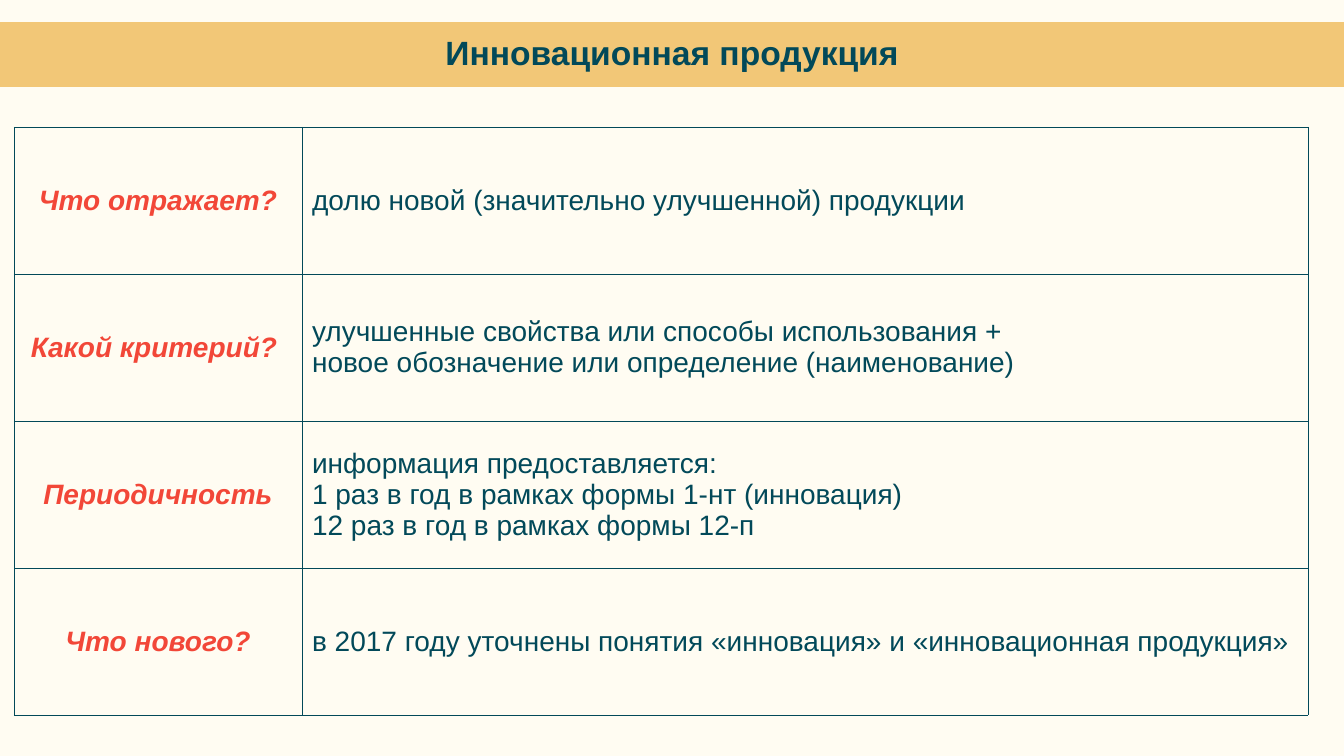
"""Build a slide with a title band and a table of questions and answers."""
from dataclasses import dataclass

from pptx import Presentation
from pptx.dml.color import RGBColor
from pptx.enum.shapes import MSO_SHAPE
from pptx.enum.text import MSO_ANCHOR, PP_ALIGN
from pptx.oxml import parse_xml
from pptx.oxml.ns import nsdecls
from pptx.util import Pt

SCALE = 12192000 / 1344


@dataclass(frozen=True)
class Theme:
    """Colours, font and type sizes of the slide."""
    paper: str = "FFFCF2"
    band: str = "F2C777"
    ink: str = "024959"
    accent: str = "F24738"
    font: str = "Arial"
    title: int = 24
    body: int = 20
    edge: float = 2.25
    rule: float = 0.25


THEME = Theme()
TITLE = {"size": Pt(THEME.title), "name": THEME.font, "bold": True}
LABEL = {"size": Pt(THEME.body), "name": THEME.font, "bold": True, "italic": True}
BODY = {"size": Pt(THEME.body), "name": THEME.font, "bold": False, "italic": False}

ROWS = [
    ("Что отражает?", ["долю новой (значительно улучшенной) продукции"], PP_ALIGN.JUSTIFY),
    ("Какой критерий? ", ["улучшенные свойства или способы использования + ",
                          "новое обозначение или определение (наименование)"], PP_ALIGN.JUSTIFY),
    ("Периодичность", ["информация предоставляется:",
                       "1 раз в год в рамках формы 1-нт (инновация)",
                       "12 раз в год в рамках формы 12-п"], PP_ALIGN.JUSTIFY),
    ("Что нового?", ["в 2017 году уточнены понятия «инновация» и «инновационная продукция»"],
     PP_ALIGN.LEFT),
]


def px(count):
    """Turn whole pixels into EMU."""
    return round(count * SCALE)


def paint(fill, color):
    """Give a fill one solid colour."""
    fill.solid()
    fill.fore_color.rgb = RGBColor.from_string(color)


def write(frame, lines, style, color, align):
    """Write one paragraph per line in one format."""
    for index, line in enumerate(lines):
        para = frame.add_paragraph() if index else frame.paragraphs[0]
        para.alignment = align
        run = para.add_run()
        run.text = line
        for key, value in style.items():
            setattr(run.font, key, value)
        run.font.color.rgb = RGBColor.from_string(color)


def add_band(slide, text, box):
    """Add the title band."""
    band = slide.shapes.add_shape(MSO_SHAPE.RECTANGLE, *map(px, box))
    band.shadow.inherit = False
    paint(band.fill, THEME.band)
    paint(band.line.fill, THEME.band)
    band.line.width = Pt(THEME.edge)
    frame = band.text_frame
    frame.word_wrap = True
    frame.vertical_anchor = MSO_ANCHOR.MIDDLE
    write(frame, [text], TITLE, THEME.ink, PP_ALIGN.CENTER)
    frame.paragraphs[0].line_spacing = Pt(THEME.title)


def frame_cell(cell):
    """Clear the fill of a cell and rule its four sides."""
    cell.fill.background()
    props = cell._tc.get_or_add_tcPr()
    for index, side in enumerate("LRTB"):
        props.insert(index, parse_xml(
            f'<a:ln{side} {nsdecls("a")} w="{Pt(THEME.rule)}"><a:solidFill>'
            f'<a:srgbClr val="{THEME.ink}"/></a:solidFill></a:ln{side}>'))


def add_grid(slide, rows, left, top, widths, height):
    """Add the table with labels on the left and answers on the right."""
    box = left, top, sum(widths), height * len(rows)
    table = slide.shapes.add_table(len(rows), len(widths), *map(px, box)).table
    table.first_row = table.horz_banding = False
    for column, width in zip(table.columns, widths):
        column.width = px(width)
    for row, (label, lines, align) in zip(table.rows, rows):
        row.height = px(height)
        name, answer = row.cells
        write(name.text_frame, [label], LABEL, THEME.accent, PP_ALIGN.CENTER)
        write(answer.text_frame, lines, BODY, THEME.ink, align)
        for cell in (name, answer):
            cell.vertical_anchor = MSO_ANCHOR.MIDDLE
            frame_cell(cell)


def main():
    """Build and save the slide."""
    deck = Presentation()
    deck.slide_width, deck.slide_height = px(1344), px(756)
    slide = deck.slides.add_slide(deck.slide_layouts[6])
    paint(slide.background.fill, THEME.paper)
    add_band(slide, "Инновационная продукция", (0, 24, 1344, 62))
    add_grid(slide, ROWS, 14, 127, (288, 1006), 147)
    deck.save("out.pptx")


if __name__ == "__main__":
    main()
